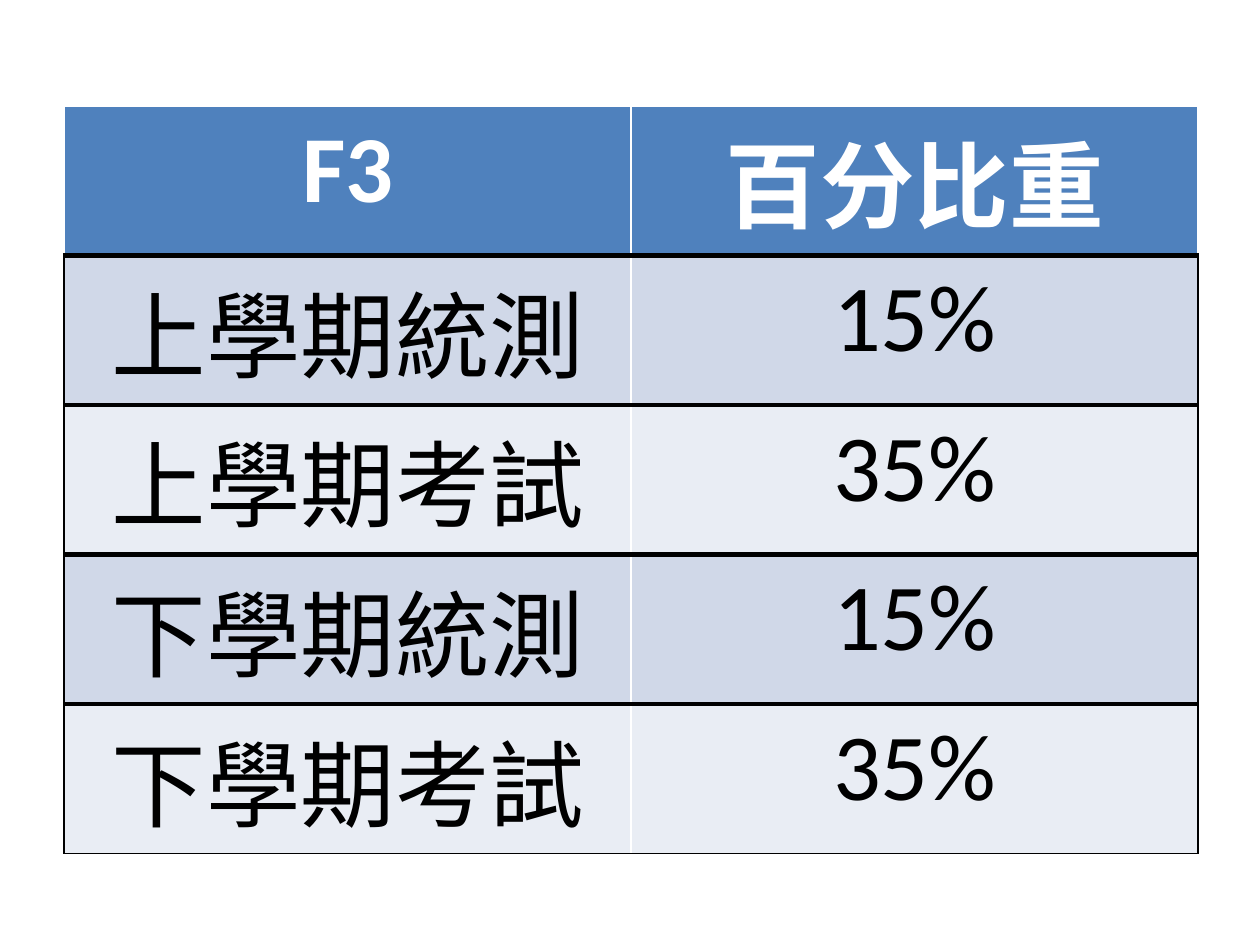
from lxml import etree
from pptx import Presentation
from pptx import util as u
from pptx.dml.color import RGBColor
from pptx.enum import text
from pptx.oxml import ns

ROWS = [
    ("F3", "百分比重"),
    ("上學期統測", "15%"),
    ("上學期考試", "35%"),
    ("下學期統測", "15%"),
    ("下學期考試", "35%"),
]


def rgb(value):
    """Return the colour for a hex string."""
    return RGBColor.from_string(value)


class Deck:
    """Hold the presentation, its style and the current slide."""

    FONT, SIZE = "Calibri", 54
    WHITE, BLACK = "FFFFFF", "000000"
    HEADER, BANDS = "4F81BD", ("D0D8E8", "E9EDF4")

    def __init__(self, width, height):
        """Start a presentation with one blank slide."""
        self.prs = Presentation()
        self.prs.slide_width, self.prs.slide_height = u.Inches(width), u.Inches(height)
        self.s = self.prs.slides.add_slide(self.prs.slide_layouts[6])

    def border(self, cell, edges):
        """Draw the cell edges, given as (colour, points) for L, R, T and B."""
        tc_pr = cell._tc.get_or_add_tcPr()
        for i, (side, (color, points)) in enumerate(zip("LRTB", edges)):
            ln = etree.Element(ns.qn(f"a:ln{side}"), w=str(u.Pt(points)))
            fill = etree.SubElement(ln, ns.qn("a:solidFill"))
            etree.SubElement(fill, ns.qn("a:srgbClr"), val=color)
            tc_pr.insert(i, ln)

    def cell(self, cell, value, fill, color, bold):
        """Fill a cell and write its centred text."""
        cell.fill.solid()
        cell.fill.fore_color.rgb = rgb(fill)
        p = cell.text_frame.paragraphs[0]
        p.text = value
        p.alignment = text.PP_ALIGN.CENTER
        font = p.runs[0].font
        font.name, font.size, font.bold = self.FONT, u.Pt(self.SIZE), bold
        font.color.rgb = rgb(color)

    def table(self, rows, left, top, width, height):
        """Add a banded table at shares of the slide's size."""
        w, h = self.prs.slide_width, self.prs.slide_height
        box = [int(v) for v in (left * w, top * h, width * w, height * h)]
        table = self.s.shapes.add_table(len(rows), len(rows[0]), *box).table
        thin, outer, rule = (self.WHITE, 1), (self.BLACK, 1), (self.BLACK, 3)
        last_row, last_col = len(rows) - 1, len(rows[0]) - 1
        for r, row in enumerate(rows):
            head = r == 0
            fill = self.HEADER if head else self.BANDS[(r - 1) % 2]
            side = thin if head else outer
            for c, value in enumerate(row):
                cell = table.cell(r, c)
                self.cell(cell, value, fill, self.WHITE if head else self.BLACK, head)
                self.border(cell, (
                    side if c == 0 else thin,
                    side if c == last_col else thin,
                    thin if head else rule,
                    outer if r == last_row else rule,
                ))


def main():
    """Build the slide and save it."""
    deck = Deck(10, 7.5)
    deck.table(ROWS, 0.51 / 10, 0.84 / 7.5, 9 / 10, 5 / 7.5)
    deck.prs.save("out.pptx")


if __name__ == "__main__":
    main()
